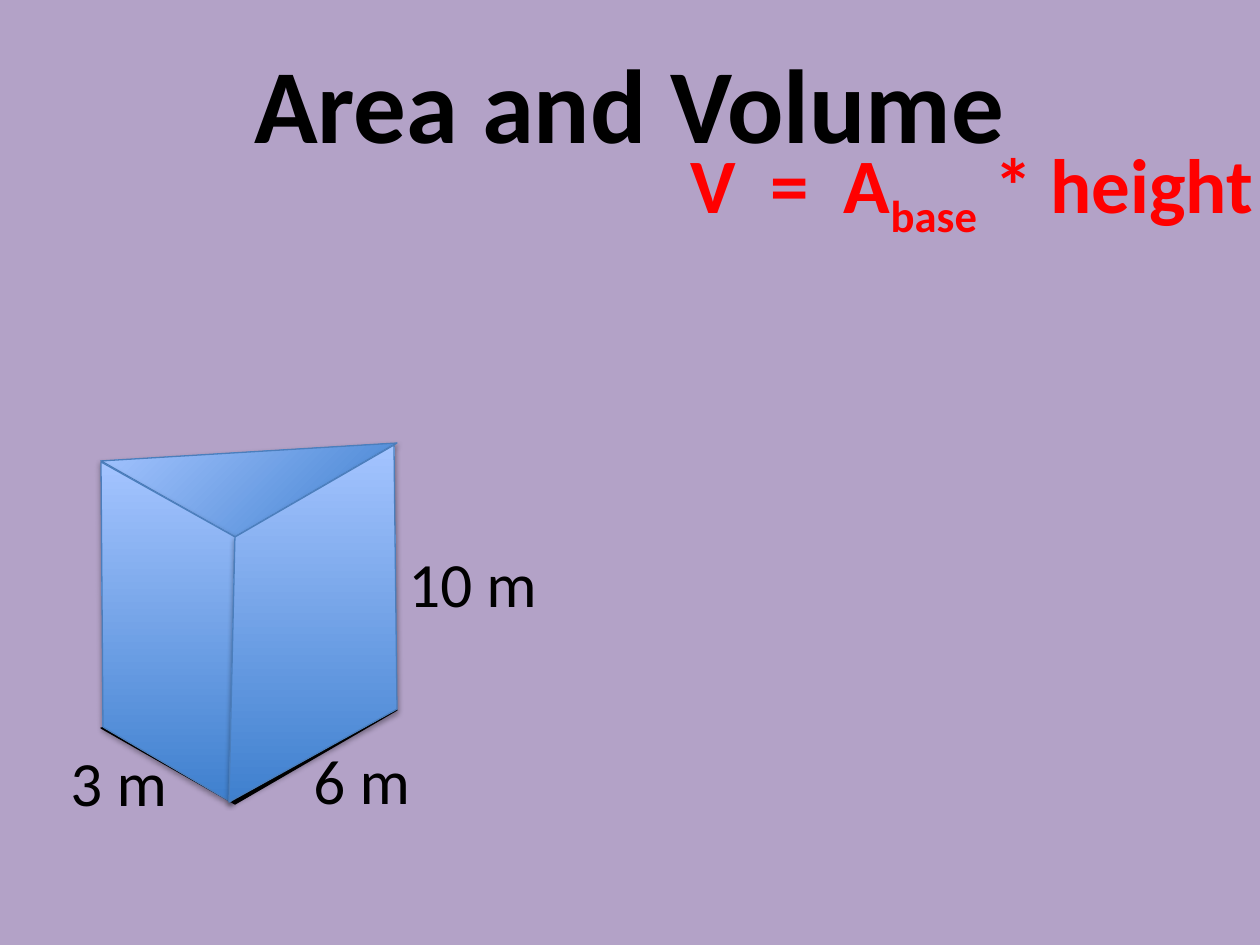
from pptx import Presentation
from pptx.dml.color import RGBColor
from pptx.enum.text import MSO_ANCHOR as Anchor, PP_ALIGN as Align
from pptx.oxml import parse_xml
from pptx.oxml.ns import nsdecls
from pptx.util import Emu, Pt

PX = 914400 / 126
LILAC = RGBColor(0xB3, 0xA2, 0xC7)
BLACK = RGBColor(0, 0, 0)
RED = RGBColor(0xFF, 0, 0)
DEEP_BLUE = RGBColor(0x3F, 0x80, 0xCE)
PALE_BLUE = RGBColor(0xA4, 0xC4, 0xFF)
EDGE_BLUE = RGBColor(0x4B, 0x7E, 0xBC)


def px(length):
    return Emu(round(length * PX))


def add_text(slide, box, *pieces, size, color=BLACK, bold=False,
             align=Align.LEFT, anchor=Anchor.TOP):
    """Each piece is a string, or a (string, baseline in 1/1000 %) pair."""
    frame = slide.shapes.add_textbox(*map(px, box)).text_frame
    frame.word_wrap = True
    frame.vertical_anchor = anchor
    line = frame.paragraphs[0]
    line.alignment = align
    for piece in pieces:
        words, baseline = piece if isinstance(piece, tuple) else (piece, 0)
        run = line.add_run()
        run.text = words
        font = run.font
        font.name, font.size, font.bold = "Calibri", Pt(size), bold
        font.color.rgb = color
        if baseline:
            run._r.get_or_add_rPr().set("baseline", str(baseline))


def add_shadow(shape):
    shape._element.spPr.append(parse_xml(
        f'<a:effectLst {nsdecls("a")}>'
        '<a:outerShdw blurRad="40000" dist="23000" dir="5400000" rotWithShape="0">'
        '<a:srgbClr val="000000"><a:alpha val="35000"/></a:srgbClr>'
        '</a:outerShdw></a:effectLst>'))


def add_face(slide, left, top, corners, angle=None):
    """Draw one face; without a gradient angle it is plain black."""
    start, *others = [(left + x, top + y) for x, y in corners]
    outline = slide.shapes.build_freeform(*start, scale=PX)
    outline.add_line_segments(others, close=True)
    face = outline.convert_to_shape()
    face.line.width = Pt(0.75)
    if angle is None:
        face.fill.solid()
        face.fill.fore_color.rgb = face.line.color.rgb = BLACK
        face.shadow.inherit = False
        return
    face.fill.gradient()
    face.fill.gradient_angle = angle
    for stop, color in zip(face.fill.gradient_stops, (DEEP_BLUE, PALE_BLUE)):
        stop.color.rgb = color
    face.line.color.rgb = EDGE_BLUE
    add_shadow(face)


def add_heading(slide, left, top, width, height):
    add_text(slide, (left, top, width, height), "Area and Volume", size=60,
             bold=True, align=Align.CENTER, anchor=Anchor.MIDDLE)
    add_text(slide, (left + 584, top + 130, 619, 199), "V  =  A", ("base", -25000),
             " * height", size=44, color=RED, bold=True)


def add_prism(slide, left, top):
    # Triangular ends, base first
    end = [(0, 18), (296, 0), (134, 94)]
    add_face(slide, left, top, [(x, y + 267) for x, y in end])
    add_face(slide, left, top, end, angle=135)

    # Side walls
    add_face(slide, left, top, [(0, 19), (134, 94), (130, 359), (2, 284)], angle=90)
    add_face(slide, left, top, [(134, 94), (293, 2), (296, 266), (128, 359)], angle=90)

    # Measurements
    for words, x, y in (("3 m", -43, 294), ("6 m", 200, 292), ("10 m", 295, 95)):
        add_text(slide, (left + x, top + y, 160, 89), words, size=36)


def main():
    deck = Presentation()
    deck.slide_width, deck.slide_height = px(1260), px(945)
    slide = deck.slides.add_slide(deck.slide_layouts[6])
    slide.background.fill.solid()
    slide.background.fill.fore_color.rgb = LILAC

    add_heading(slide, 94, 0, 1071, 203)
    add_prism(slide, 101, 443)
    deck.save("out.pptx")


if __name__ == "__main__":
    main()
